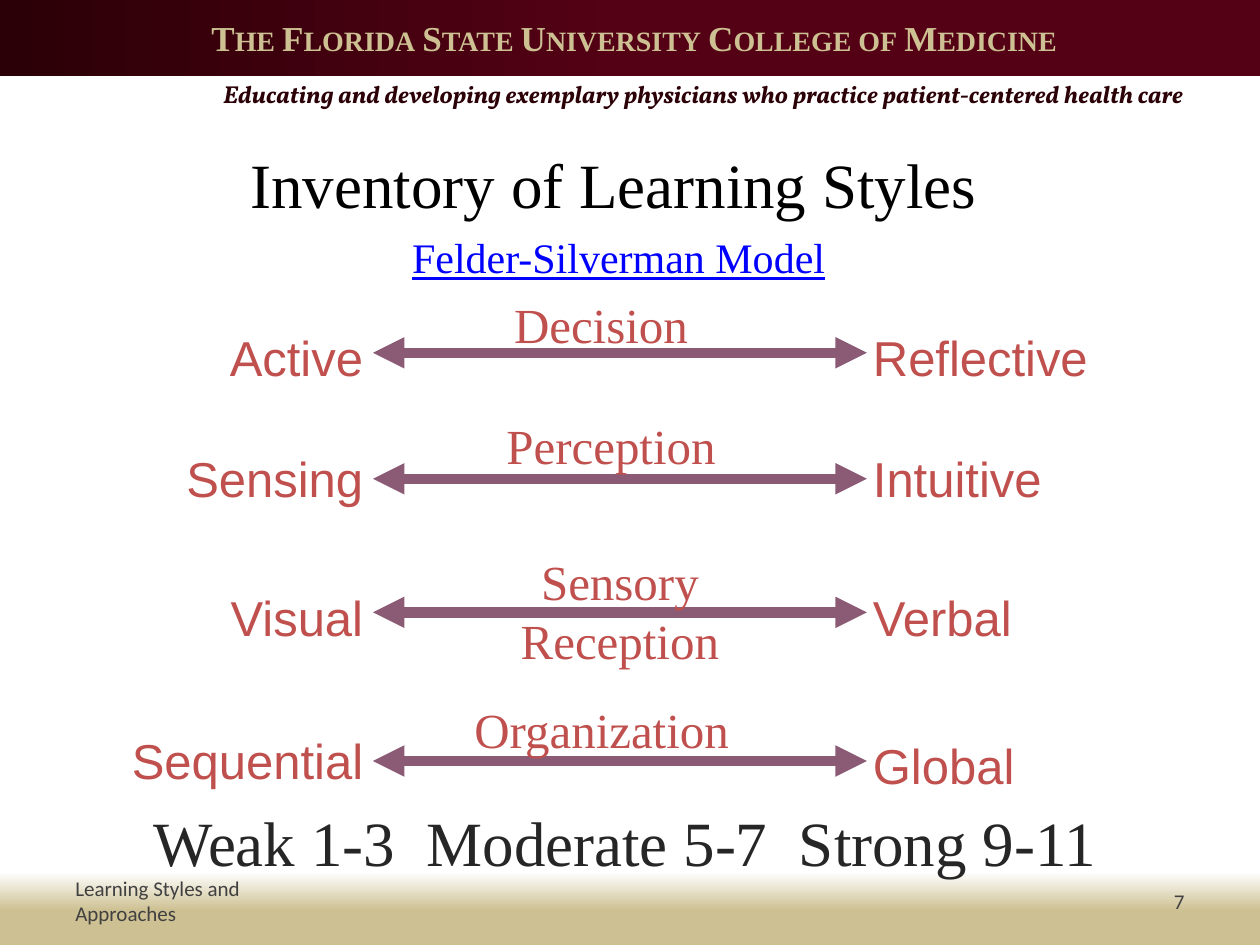
from lxml import etree
from pptx import Presentation
from pptx.dml.color import RGBColor
from pptx.enum import shapes, text
from pptx.oxml import ns
from pptx.util import Inches, Pt

GARNET = RGBColor(0x54, 0x01, 0x15)
DARK_GARNET = RGBColor(0x2B, 0x00, 0x07)
GOLD = RGBColor(0xCD, 0xC0, 0x92)
WHITE = RGBColor(0xFF, 0xFF, 0xFF)
BLACK = RGBColor(0x00, 0x00, 0x00)
CHARCOAL = RGBColor(0x26, 0x26, 0x26)
GRAY = RGBColor(0x40, 0x40, 0x40)
LINK_BLUE = RGBColor(0x00, 0x00, 0xFF)
RED = RGBColor(0xC0, 0x50, 0x4D)
MAUVE = RGBColor(0x8B, 0x5B, 0x76)

SERIF = "Times New Roman"
LEFT, CENTER, RIGHT = text.PP_ALIGN.LEFT, text.PP_ALIGN.CENTER, text.PP_ALIGN.RIGHT
TOP, MIDDLE = text.MSO_ANCHOR.TOP, text.MSO_ANCHOR.MIDDLE

ARROW_START, ARROW_END = 2.96, 6.88
POLE_LEFT_EDGE, POLE_RIGHT_EDGE = 2.98, 6.83
LABEL_HEIGHT = 0.57

# Arrow height; left pole, width, top; right pole, width, top;
# dimension, left, top, width, height
SCALES = [
    (2.8, ("Active", 1.56, 2.55), ("Reflective", 2.33, 2.55),
     ("Decision", 3.77, 2.29, 2, LABEL_HEIGHT)),
    (3.8, ("Sensing", 1.89, 3.51), ("Intuitive", 2.25, 3.51),
     ("Perception", 3.85, 3.25, 2, LABEL_HEIGHT)),
    (4.86, ("Visual", 1.56, 4.61), ("Verbal", 1.5, 4.61),
     ("Sensory Reception", 3.92, 4.33, 2, 1.03)),
    (6.04, ("Sequential", 2.98, 5.75), ("Global", 2, 5.79),
     ("Organization", 3.58, 5.5, 2.39, LABEL_HEIGHT)),
]


def add_band(slide, top, height, angle, stops):
    band = slide.shapes.add_shape(shapes.MSO_SHAPE.RECTANGLE, 0, Inches(top),
                                  Inches(10), Inches(height))
    band.shadow.inherit = False
    band.line.fill.background()
    band.fill.gradient()
    band.fill.gradient_angle = angle
    for stop, (position, color) in zip(band.fill.gradient_stops, stops):
        stop.position = position
        stop.color.rgb = color


def add_text(slide, words, left, top, width, height, size, color, font=SERIF,
             align=LEFT, anchor=TOP, wrap=True):
    box = slide.shapes.add_textbox(Inches(left), Inches(top),
                                   Inches(width), Inches(height))
    frame = box.text_frame
    frame.word_wrap = wrap
    frame.vertical_anchor = anchor
    frame.text = words
    paragraph = frame.paragraphs[0]
    paragraph.alignment = align
    run = paragraph.runs[0]
    run.font.name = font
    run.font.size = Pt(size)
    run.font.color.rgb = color
    return run


def add_double_arrow(slide, height):
    arrow = slide.shapes.add_connector(
        shapes.MSO_CONNECTOR.STRAIGHT, Inches(ARROW_START), Inches(height),
        Inches(ARROW_END), Inches(height))
    arrow.line.color.rgb = MAUVE
    arrow.line.width = Pt(6)
    line = arrow.line._get_or_add_ln()
    for end in ("a:headEnd", "a:tailEnd"):
        etree.SubElement(line, ns.qn(end), type="triangle")
    etree.SubElement(arrow._element.spPr, ns.qn("a:effectLst"))


def add_scale(slide, height, left_pole, right_pole, dimension):
    add_double_arrow(slide, height)
    name, width, top = left_pole
    add_text(slide, name, POLE_LEFT_EDGE - width, top, width, LABEL_HEIGHT,
             28, RED, "Arial", RIGHT)
    name, width, top = right_pole
    add_text(slide, name, POLE_RIGHT_EDGE, top, width, LABEL_HEIGHT,
             28, RED, "Arial")
    add_text(slide, *dimension, 28, RED, align=CENTER)


def main():
    deck = Presentation()
    deck.slide_width, deck.slide_height = Inches(10), Inches(7.5)
    slide = deck.slides.add_slide(deck.slide_layouts[6])

    # Header and footer bands
    add_band(slide, 6.92, 0.58, 90, [(0.47, GOLD), (1, WHITE)])
    add_band(slide, 0, 0.6, 180, [(0.5, GARNET), (1, DARK_GARNET)])

    # Header
    college = add_text(slide, "The Florida State University College of Medicine",
                       1.58, 0.08, 7.08, 0.44, 20, GOLD)
    college.font.bold = True
    college._r.get_or_add_rPr().set("cap", "small")
    mission = add_text(
        slide, "Educating and developing exemplary physicians who practice "
        "patient-centered health care",
        1.25, 0.58, 8.67, 0.34, 14, DARK_GARNET, "Vollkorn", CENTER)
    mission.font.bold = mission.font.italic = True

    # Title and model name
    add_text(slide, "Inventory of Learning Styles", 1.08, 0.83, 7.58, 1.25,
             36, BLACK, align=CENTER, anchor=MIDDLE)
    model = add_text(slide, "Felder-Silverman Model", 3.17, 1.79, 3.48, 0.5,
                     24, LINK_BLUE, align=CENTER, wrap=False)
    model.font.underline = True

    # Learning style scales and their scoring
    for scale in SCALES:
        add_scale(slide, *scale)
    add_text(slide, "Weak 1-3  Moderate 5-7  Strong 9-11", 0.5, 6.33, 8.92, 0.71,
             36, CHARCOAL, align=CENTER)

    # Footer
    add_text(slide, "Learning Styles and Approaches", 0.5, 6.95, 2.33, 0.4,
             12, GRAY, "Calibri", anchor=MIDDLE)
    add_text(slide, "7", 7.17, 6.95, 2.33, 0.4, 12, GRAY, "Calibri", RIGHT, MIDDLE)

    deck.save("out.pptx")


if __name__ == "__main__":
    main()
